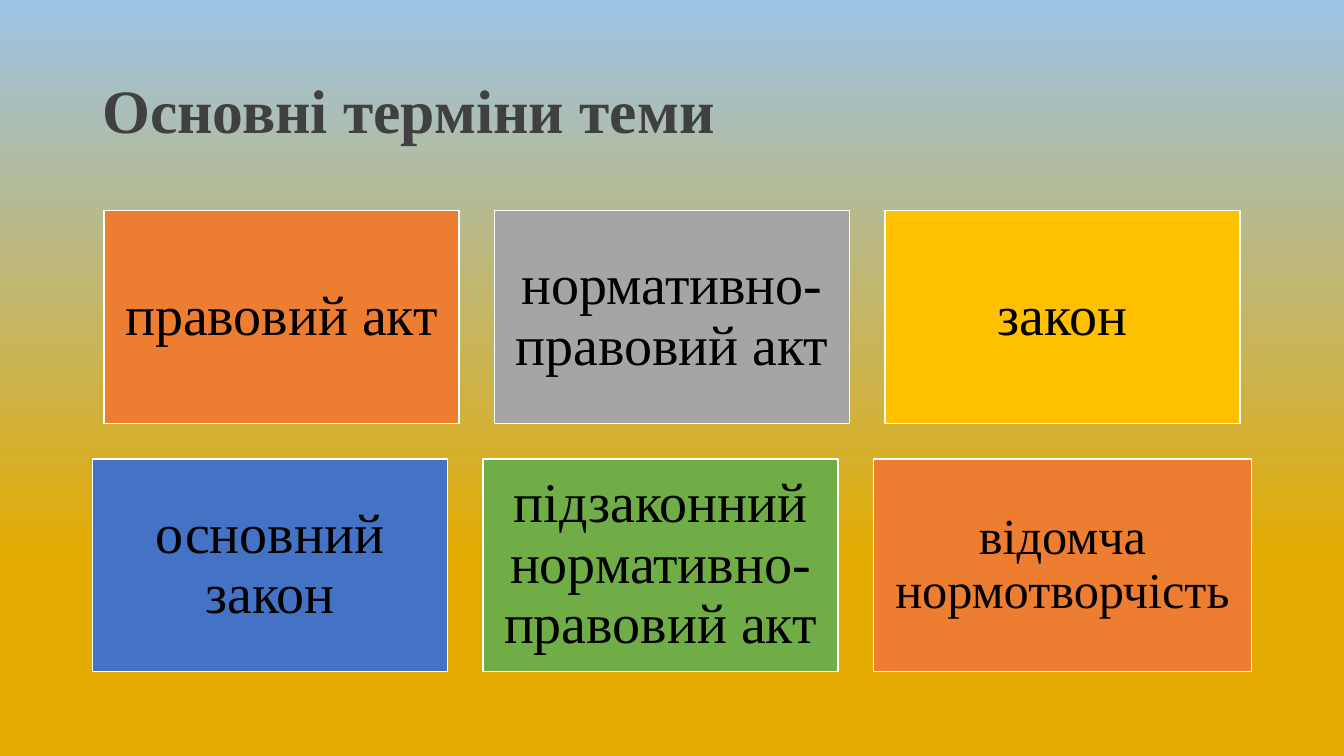
import pptx
import pptx.dml.color
import pptx.enum.shapes
import pptx.enum.text
import pptx.util

Pt = pptx.util.Pt
RGBColor = pptx.dml.color.RGBColor
ALIGN = pptx.enum.text.PP_ALIGN

SKY = RGBColor(0x9D, 0xC3, 0xE6)
WHEAT = RGBColor(0xE3, 0xAB, 0x00)
DARK_GRAY = RGBColor(0x40, 0x40, 0x40)
BLACK = RGBColor(0x00, 0x00, 0x00)
WHITE = RGBColor(0xFF, 0xFF, 0xFF)
ORANGE = RGBColor(0xED, 0x7D, 0x31)
GRAY = RGBColor(0xA5, 0xA5, 0xA5)
GOLD = RGBColor(0xFF, 0xC0, 0x00)
BLUE = RGBColor(0x44, 0x72, 0xC4)
GREEN = RGBColor(0x70, 0xAD, 0x47)

SLIDE_WIDTH = 960
BOX_WIDTH = 253.5
WIDE_BOX_WIDTH = 270
BOX_HEIGHT = 152
GAP = 25.4
FIRST_ROW_TOP = 150.4


def write_text(box, text, size, color, align, margins, bold=False):
    frame = box.text_frame
    frame.word_wrap = True
    frame.vertical_anchor = pptx.enum.text.MSO_ANCHOR.MIDDLE
    frame.margin_left, frame.margin_top = Pt(margins[0]), Pt(margins[1])
    frame.margin_right, frame.margin_bottom = Pt(margins[0]), Pt(margins[1])
    para = frame.paragraphs[0]
    para.alignment = align
    para.line_spacing = 0.9
    span = para.add_run()
    span.text = text
    span.font.name = "Times New Roman"
    span.font.size = Pt(size)
    span.font.bold = bold
    span.font.color.rgb = color


deck = pptx.Presentation()
deck.slide_width = Pt(SLIDE_WIDTH)
deck.slide_height = Pt(540)
page = deck.slides.add_slide(deck.slide_layouts[6])

backdrop = page.background.fill
backdrop.gradient()
backdrop.gradient_angle = 90
for stop, position, color in zip(backdrop.gradient_stops, (0.26, 1), (WHEAT, SKY)):
    stop.position = position
    stop.color.rgb = color

title = page.shapes.add_textbox(Pt(66), Pt(28.75), Pt(828), Pt(104.4))
write_text(title, "Основні терміни теми", size=44, color=DARK_GRAY,
           align=ALIGN.LEFT, margins=(7.2, 3.6), bold=True)

term_rows = [
    [("правовий акт", ORANGE, BOX_WIDTH, 40),
     ("нормативно-правовий акт", GRAY, BOX_WIDTH, 40),
     ("закон", GOLD, BOX_WIDTH, 40)],
    [("основний закон", BLUE, BOX_WIDTH, 40),
     ("підзаконний нормативно-правовий акт", GREEN, BOX_WIDTH, 40),
     ("відомча нормотворчість", ORANGE, WIDE_BOX_WIDTH, 36)],
]

for row_index, terms in enumerate(term_rows):
    row_width = sum(width for _, _, width, _ in terms) + GAP * (len(terms) - 1)
    left = (SLIDE_WIDTH - row_width) / 2
    top = FIRST_ROW_TOP + row_index * (BOX_HEIGHT + GAP)
    for term, color, width, size in terms:
        box = page.shapes.add_shape(pptx.enum.shapes.MSO_SHAPE.RECTANGLE,
                                    Pt(left), Pt(top), Pt(width), Pt(BOX_HEIGHT))
        box.shadow.inherit = False
        box.fill.solid()
        box.fill.fore_color.rgb = color
        box.line.color.rgb = WHITE
        box.line.width = Pt(1)
        inset = size * 0.3
        write_text(box, term, size=size, color=BLACK,
                   align=ALIGN.CENTER, margins=(inset, inset))
        left += width + GAP

deck.save("out.pptx")
